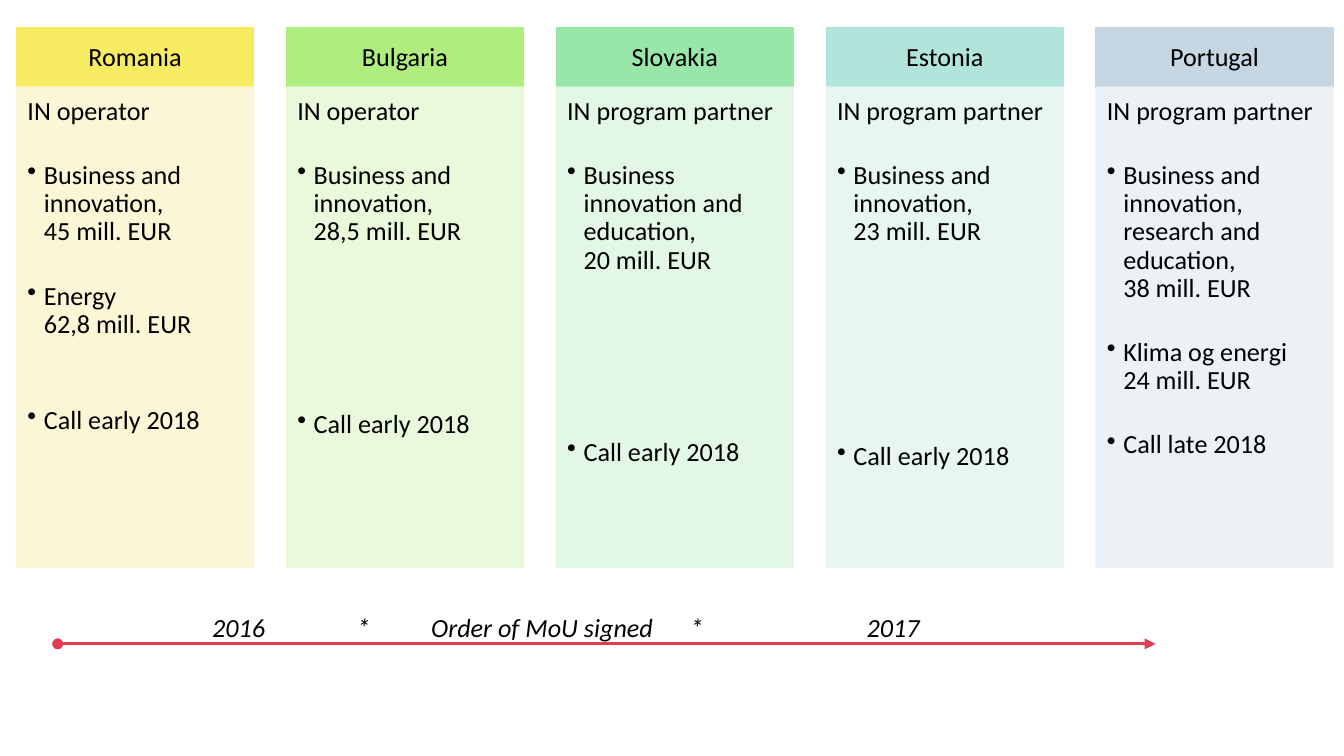
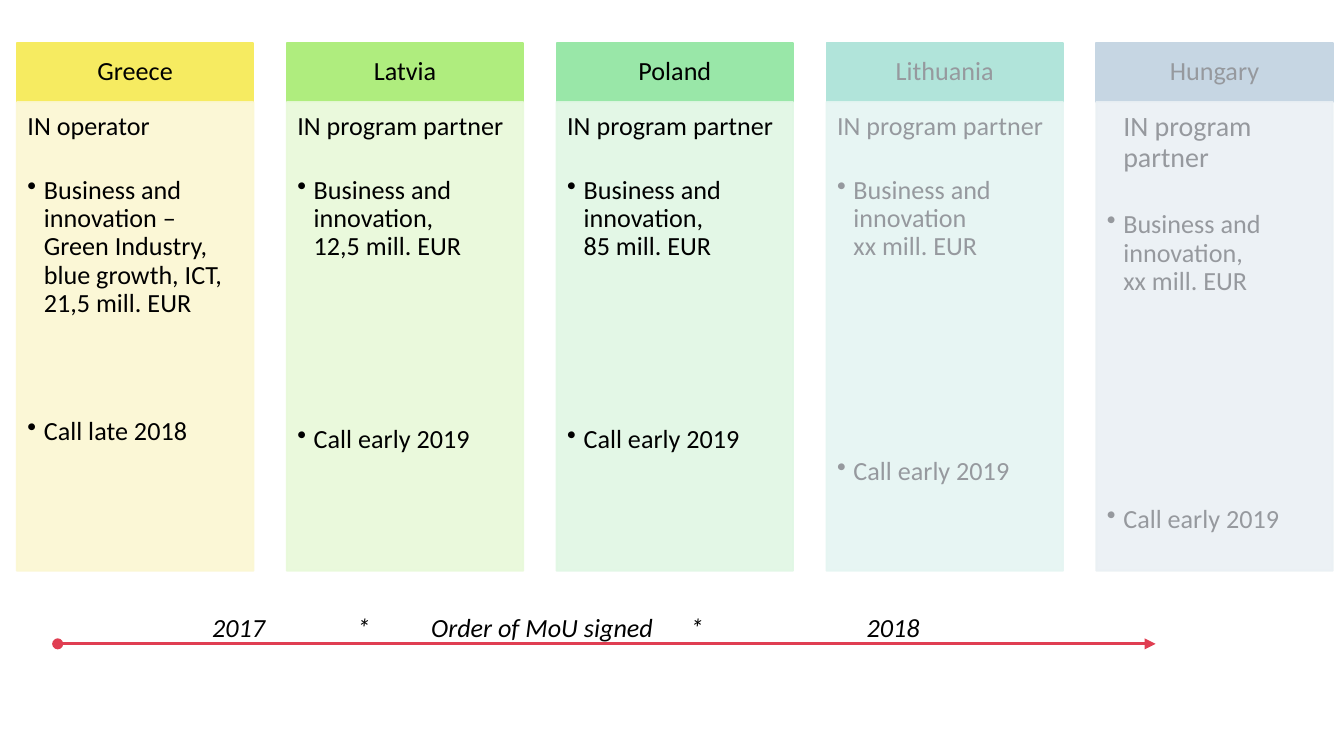
"""Build two slides of country programmes ordered by the signing of their MoU."""
from copy import deepcopy

from lxml import etree
from pptx import Presentation
from pptx.dml.color import RGBColor
from pptx.enum.shapes import MSO_CONNECTOR, MSO_SHAPE
from pptx.enum.text import MSO_ANCHOR, PP_ALIGN
from pptx.oxml.ns import qn
from pptx.util import Cm, Pt

RECTANGLE = MSO_SHAPE.RECTANGLE
STRAIGHT = MSO_CONNECTOR.STRAIGHT
TOP, MIDDLE = MSO_ANCHOR.TOP, MSO_ANCHOR.MIDDLE
LEFT, CENTER = PP_ALIGN.LEFT, PP_ALIGN.CENTER

BLACK = RGBColor(0x00, 0x00, 0x00)
GREY = RGBColor(0x96, 0x99, 0x9E)
RED = RGBColor(0xE0, 0x3E, 0x52)
COLUMN_COLOURS = [
    (RGBColor(0xF6, 0xEB, 0x61), RGBColor(0xFB, 0xF7, 0xD2)),
    (RGBColor(0xAF, 0xED, 0x7E), RGBColor(0xE8, 0xF9, 0xD9)),
    (RGBColor(0x99, 0xE7, 0xA8), RGBColor(0xE0, 0xF7, 0xE4)),
    (RGBColor(0xB1, 0xE4, 0xDA), RGBColor(0xE5, 0xF5, 0xF2)),
    (RGBColor(0xC6, 0xD6, 0xE3), RGBColor(0xEA, 0xF0, 0xF4)),
]
FONT = "Calibri"
TEXT_SIZE = 14
FIRST_LEFT, COLUMN_STEP, COLUMN_WIDTH = 0.32, 5.1, 4.47
HEADER_HEIGHT = 1.12
INDENT = Cm(0.31)
BLANK_LINE, PARAGRAPH_GAP = 17.2, 2
TIMELINE_TABS = [2.74, 4.14, 9.04, 12.37]

OPERATOR, PARTNER = "IN operator", "IN program partner"

# fmt: off
SLIDES = [
    (0.53, 9.07, "2016", "2017", [
        ("Romania", OPERATOR, BLACK, 14, [
            (1, "Business and innovation,\n45 mill. EUR"),
            (1, "Energy\n62,8 mill. EUR"),
            (2, "Call early 2018")]),
        ("Bulgaria", OPERATOR, BLACK, 14, [
            (1, "Business and innovation,\n28,5 mill. EUR"),
            (5, "Call early 2018")]),
        ("Slovakia", PARTNER, BLACK, 14, [
            (1, "Business innovation and education,\n20 mill. EUR"),
            (5, "Call early 2018")]),
        ("Estonia", PARTNER, BLACK, 14, [
            (1, "Business and innovation,\n23 mill. EUR"),
            (6, "Call early 2018")]),
        ("Portugal", PARTNER, BLACK, 14, [
            (1, "Business and innovation, research and education,\n38 mill. EUR"),
            (1, "Klima og energi\n24 mill. EUR"),
            (1, "Call late 2018")]),
    ]),
    (0.81, 8.86, "2017", "2018", [
        ("Greece", OPERATOR, BLACK, 14, [
            (1, "Business and innovation – Green Industry, blue growth, ICT,\n21,5 mill. EUR"),
            (3, "Call late 2018")]),
        ("Latvia", PARTNER, BLACK, 14, [
            (1, "Business and innovation,\n12,5 mill. EUR"),
            (5, "Call early 2019")]),
        ("Poland", PARTNER, BLACK, 14, [
            (1, "Business and innovation,\n85 mill. EUR"),
            (5, "Call early 2019")]),
        ("Lithuania", PARTNER, GREY, 14, [
            (1, "Business and innovation\nxx mill. EUR"),
            (6, "Call early 2019")]),
        ("Hungary", PARTNER, GREY, 15, [
            (1, "Business and innovation,\nxx mill. EUR"),
            (6, "Call early 2019")]),
    ]),
]
# fmt: on


def add_panel(slide, left, top, height, colour, anchor, margins):
    panel = slide.shapes.add_shape(RECTANGLE, Cm(left), Cm(top), Cm(COLUMN_WIDTH), Cm(height))
    panel.shadow.inherit = False
    panel.fill.solid()
    panel.fill.fore_color.rgb = colour
    panel.line.color.rgb = colour
    panel.line.width = Pt(1)
    frame = panel.text_frame
    frame.word_wrap = True
    frame.vertical_anchor = anchor
    frame.margin_left, frame.margin_top, frame.margin_right, frame.margin_bottom = map(Cm, margins)
    return panel


def write(paragraph, text, colour, size=TEXT_SIZE, italic=None):
    paragraph.text = text
    for run in paragraph.runs:
        run.font.name = FONT
        run.font.size = Pt(size)
        run.font.color.rgb = colour
        run.font.italic = italic
    for line_break in paragraph._p.findall(qn("a:br")):
        line_break.append(deepcopy(paragraph.runs[0].font._element))


prs = Presentation()
prs.slide_width, prs.slide_height = Cm(25.4), Cm(14.29)

for header_top, body_height, first_year, last_year, countries in SLIDES:
    slide = prs.slides.add_slide(prs.slide_layouts[6])

    for column, (country, role, colour, role_size, points) in enumerate(countries):
        left = FIRST_LEFT + column * COLUMN_STEP
        header_colour, body_colour = COLUMN_COLOURS[column]

        header = add_panel(slide, left, header_top, HEADER_HEIGHT, header_colour,
                           MIDDLE, (0.28, 0.15, 0.28, 0.15))
        heading = header.text_frame.paragraphs[0]
        heading.alignment = CENTER
        heading.line_spacing = 0.9
        write(heading, country, colour)

        body = add_panel(slide, left, header_top + HEADER_HEIGHT, body_height, body_colour,
                         TOP, (0.2, 0.2, 0.28, 0.3))
        for body_tint in body.element.spPr.iter(qn("a:srgbClr")):
            etree.SubElement(body_tint, qn("a:alpha"), val="90000")

        role_line = body.text_frame.paragraphs[0]
        role_line.alignment = LEFT
        role_line.line_spacing = 0.9
        if role_size > TEXT_SIZE:
            role_line._p.get_or_add_pPr().set("marL", str(INDENT))
        write(role_line, role, colour, role_size)

        for blank_lines, text in points:
            point = body.text_frame.add_paragraph()
            point.alignment = LEFT
            point.line_spacing = 0.9
            point.space_before = Pt(PARAGRAPH_GAP + BLANK_LINE * blank_lines * role_size / TEXT_SIZE)
            properties = point._p.get_or_add_pPr()
            properties.set("marL", str(INDENT))
            properties.set("indent", str(-INDENT))
            etree.SubElement(properties, qn("a:buChar"), char="•")
            write(point, text, colour)

    timeline = slide.shapes.add_textbox(Cm(3.76), Cm(11.43), Cm(15.32), Cm(0.86))
    timeline.text_frame.word_wrap = True
    labels = timeline.text_frame.paragraphs[0]
    tab_list = etree.SubElement(labels._p.get_or_add_pPr(), qn("a:tabLst"))
    for tab in TIMELINE_TABS:
        etree.SubElement(tab_list, qn("a:tab"), pos=str(Cm(tab)), algn="l")
    write(labels, f"{first_year}\t*\tOrder of MoU signed\t*\t{last_year}", BLACK, italic=True)

    arrow = slide.shapes.add_connector(STRAIGHT, Cm(1.09), Cm(12.17), Cm(21.84), Cm(12.17))
    arrow.line.color.rgb = RED
    arrow.line.width = Pt(1.5)
    arrow_properties = arrow.element.spPr
    outline = arrow_properties.find(qn("a:ln"))
    etree.SubElement(outline, qn("a:headEnd"), type="oval")
    etree.SubElement(outline, qn("a:tailEnd"), type="triangle")
    etree.SubElement(arrow_properties, qn("a:effectLst"))

prs.save("out.pptx")
